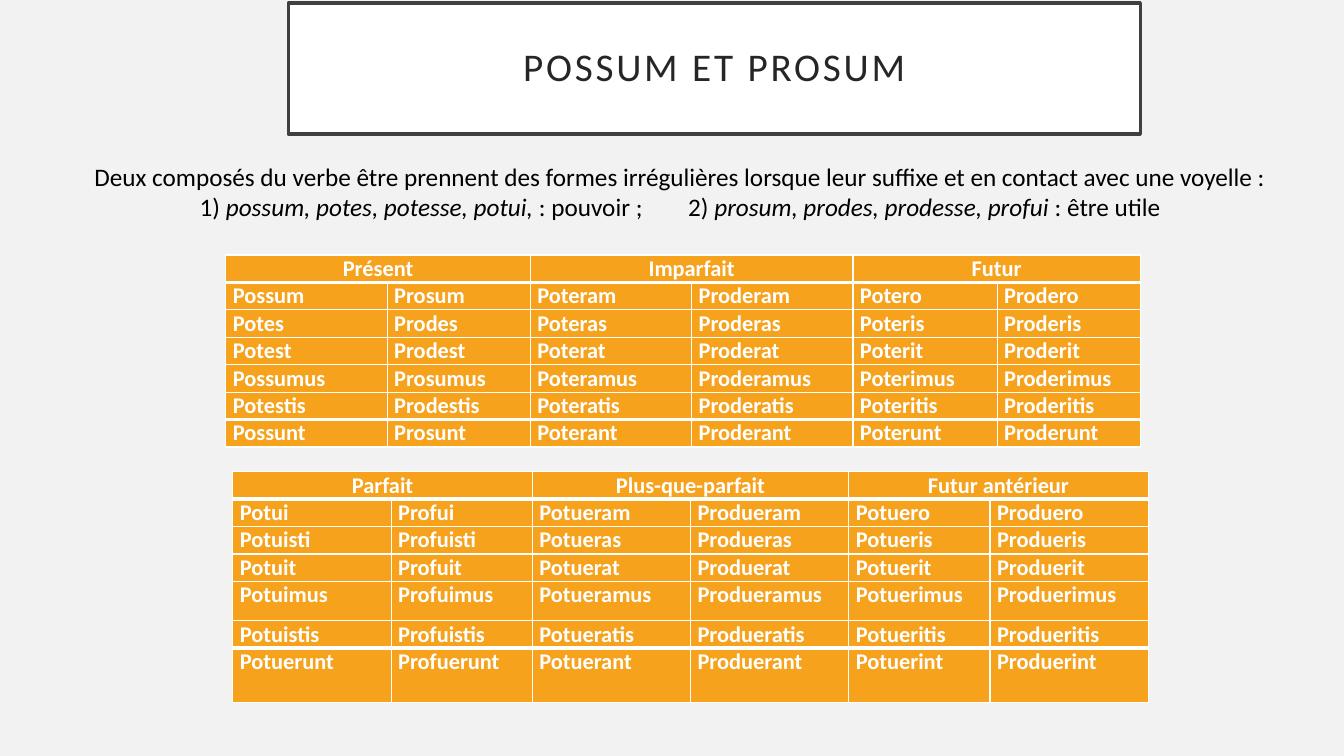
"""Build a slide on the Latin verbs possum and prosum with two conjugation tables."""
from lxml import etree
from pptx import Presentation
from pptx.dml.color import RGBColor
from pptx.enum.shapes import MSO_SHAPE
from pptx.enum.text import MSO_ANCHOR, PP_ALIGN
from pptx.oxml.ns import qn
from pptx.util import Inches, Pt

RECTANGLE = MSO_SHAPE.RECTANGLE
MIDDLE = MSO_ANCHOR.MIDDLE
CENTER, LEFT, JUSTIFY = PP_ALIGN.CENTER, PP_ALIGN.LEFT, PP_ALIGN.JUSTIFY

THEME = {
    "font": "Calibri",
    "page": RGBColor.from_string("F2F2F2"),
    "white": RGBColor.from_string("FFFFFF"),
    "frame": RGBColor.from_string("404040"),
    "title": RGBColor.from_string("262626"),
    "text": RGBColor.from_string("000000"),
    "cell": RGBColor.from_string("F6A21D"),
    "title_size": Pt(28),
    "text_size": Pt(18),
    "cell_size": Pt(16),
}
GRID_COLUMNS, GRID_ROWS = 1333, 750
UNIT = Inches(0.01)
ROW = 27

TABLES = [
    {
        "left": 224, "top": 253, "align": JUSTIFY,
        "columns": [160, 142, 160, 160, 143, 142],
        "rows": [ROW] * 7,
        "tenses": ["Présent", "Imparfait", "Futur"],
        "forms": [
            "Possum Prosum Poteram Proderam Potero Prodero",
            "Potes Prodes Poteras Proderas Poteris Proderis",
            "Potest Prodest Poterat Proderat Poterit Proderit",
            "Possumus Prosumus Poteramus Proderamus Poterimus Proderimus",
            "Potestis Prodestis Poteratis Proderatis Poteritis Proderitis",
            "Possunt Prosunt Poterant Proderant Poterunt Proderunt",
        ],
    },
    {
        "left": 231, "top": 468, "align": LEFT,
        "columns": [157, 140, 157, 157, 140, 157],
        "rows": [ROW] * 4 + [39, ROW, 2 * ROW],
        "tenses": ["Parfait", "Plus-que-parfait", "Futur antérieur"],
        "forms": [
            "Potui Profui Potueram Produeram Potuero Produero",
            "Potuisti Profuisti Potueras Produeras Potueris Produeris",
            "Potuit Profuit Potuerat Produerat Potuerit Produerit",
            "Potuimus Profuimus Potueramus Produeramus Potuerimus Produerimus",
            "Potuistis Profuistis Potueratis Produeratis Potueritis Produeritis",
            "Potuerunt Profuerunt Potuerant Produerant Potuerint Produerint",
        ],
    },
]


def style(para, size, color, align, bold=False):
    para.alignment = align
    para.font.name = THEME["font"]
    para.font.size = size
    para.font.color.rgb = color
    para.font.bold = bold


def add_borders(cell, top, bottom):
    widths = {"a:lnL": 1, "a:lnR": 1, "a:lnT": top, "a:lnB": bottom}
    properties = cell._tc.get_or_add_tcPr()
    for position, (tag, width) in enumerate(widths.items()):
        line = etree.Element(qn(tag), w=str(Pt(width)))
        fill = etree.SubElement(line, qn("a:solidFill"))
        etree.SubElement(fill, qn("a:srgbClr"), val=str(THEME["white"]))
        properties.insert(position, line)


deck = Presentation()
deck.slide_width = GRID_COLUMNS * UNIT
deck.slide_height = GRID_ROWS * UNIT
page = deck.slides.add_slide(deck.slide_layouts[6])
page.background.fill.solid()
page.background.fill.fore_color.rgb = THEME["page"]

title_box = page.shapes.add_shape(RECTANGLE, 286 * UNIT, 3 * UNIT, 845 * UNIT, 130 * UNIT)
title_box.shadow.inherit = False
title_box.fill.solid()
title_box.fill.fore_color.rgb = THEME["white"]
title_box.line.color.rgb = THEME["frame"]
title_box.line.width = Pt(2.5)
title_frame = title_box.text_frame
title_frame.vertical_anchor = MIDDLE
title_para = title_frame.paragraphs[0]
title_para.line_spacing = 0.9
style(title_para, THEME["title_size"], THEME["title"], CENTER)
title_span = title_para.add_run()
title_span.text = "POSSUM ET PROSUM"
title_span.font._element.set("spc", "200")

for table_data in TABLES:
    columns, rows = table_data["columns"], table_data["rows"]
    table = page.shapes.add_table(
        len(rows), len(columns), table_data["left"] * UNIT, table_data["top"] * UNIT,
        sum(columns) * UNIT, sum(rows) * UNIT).table
    for column, width in zip(table.columns, columns):
        column.width = width * UNIT
    for row, height in zip(table.rows, rows):
        row.height = height * UNIT
    for index, tense in enumerate(table_data["tenses"]):
        heading = table.cell(0, 2 * index)
        heading.merge(table.cell(0, 2 * index + 1))
        heading.text = tense
    for row_index, forms in enumerate(table_data["forms"], start=1):
        for column_index, form in enumerate(forms.split()):
            table.cell(row_index, column_index).text = form
    last = len(rows) - 1
    for row_index, row in enumerate(table.rows):
        for cell in row.cells:
            cell.margin_left = cell.margin_right = 7 * UNIT
            cell.margin_top = cell.margin_bottom = 0
            cell.fill.solid()
            cell.fill.fore_color.rgb = THEME["cell"]
            add_borders(cell, 3 if row_index in (1, last) else 1,
                        3 if row_index in (0, last - 1) else 1)
            align = CENTER if row_index == 0 else table_data["align"]
            style(cell.text_frame.paragraphs[0], THEME["cell_size"], THEME["white"], align, True)

intro_box = page.shapes.add_textbox(36 * UNIT, 154 * UNIT, 1277 * UNIT, 71 * UNIT)
intro = intro_box.text_frame
intro.word_wrap = True
intro.vertical_anchor = MIDDLE
rule_para = intro.paragraphs[0]
rule_para.text = ("Deux composés du verbe être prennent des formes irrégulières "
                  "lorsque leur suffixe et en contact avec une voyelle :")
verbs_para = intro.add_paragraph()
for para in (rule_para, verbs_para):
    style(para, THEME["text_size"], THEME["text"], CENTER)
for text, italic, spacing in [
    ("1) ", False, 0),
    ("possum, potes, potesse, potui, ", True, 0),
    (": pouvoir ;", False, 0),
    (" ", False, 2850),
    ("2) ", False, 0),
    ("prosum, prodes, prodesse, profui", True, 0),
    (" : être utile", False, 0),
]:
    span = verbs_para.add_run()
    span.text = text
    span.font.italic = italic
    span.font._element.set("spc", str(spacing))

deck.save("out.pptx")
